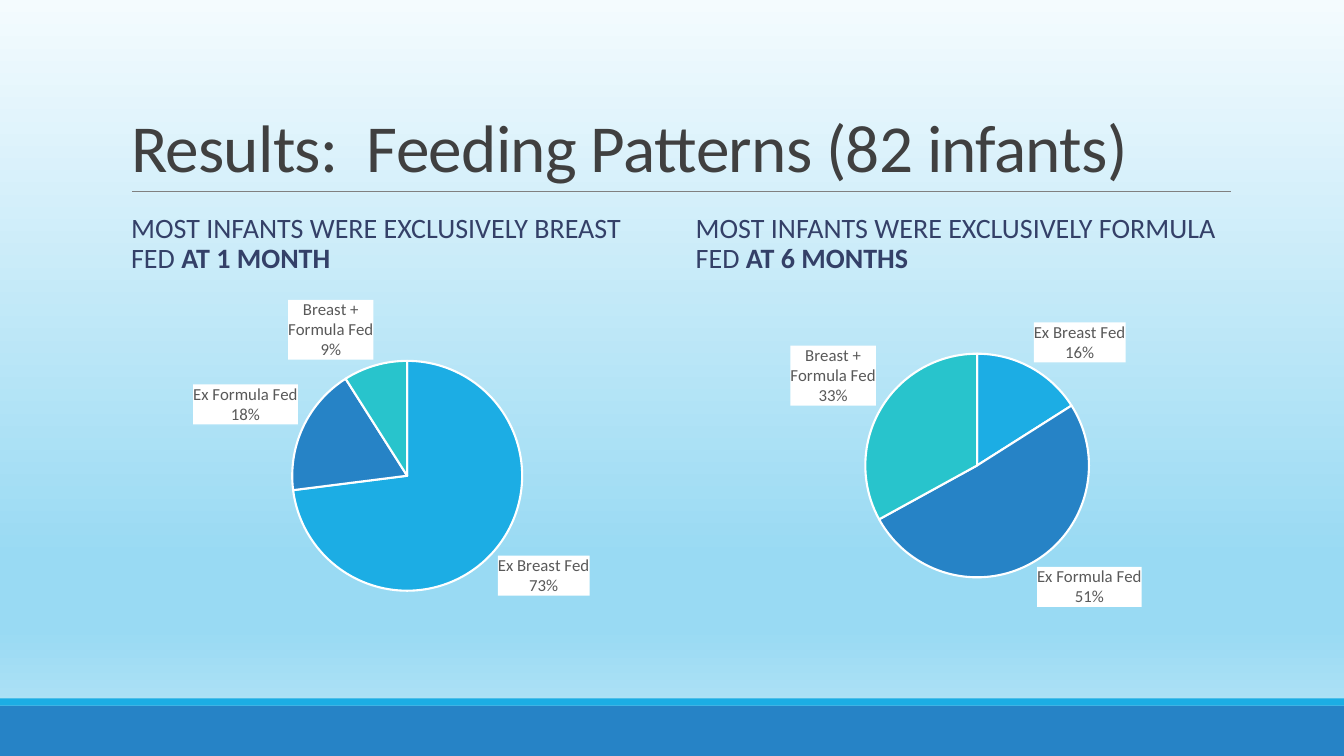
"""Build the feeding patterns slide with two pie charts."""
from copy import deepcopy
from dataclasses import dataclass

from lxml import etree
from pptx import Presentation
from pptx.chart.data import CategoryChartData as Data
from pptx.dml.color import RGBColor as RGB
from pptx.enum.chart import XL_CHART_TYPE as Kind, XL_LABEL_POSITION as Spot
from pptx.enum.shapes import MSO_CONNECTOR as Link, MSO_SHAPE as Form
from pptx.enum.text import MSO_ANCHOR as Anchor, MSO_AUTO_SIZE as Fit, PP_ALIGN as Align
from pptx.oxml import parse_xml
from pptx.oxml.ns import nsdecls, qn
from pptx.util import Inches, Pt

TITLE = "Results:  Feeding Patterns (82 infants)"
GROUPS = ["Ex Breast Fed", "Ex Formula Fed", "Breast + Formula Fed"]
PANELS = [
    {"slot": 1, "left": 1.2, "lead": "MOST INFANTS WERE EXCLUSIVELY BREAST FED ",
     "age": "AT 1 MONTH", "shares": (73, 18, 9),
     "box": (0.94, 2.82, 5.66, 3.57), "hub": (4.04, 4.72), "radius": 1.14},
    {"slot": 3, "left": 6.8, "lead": "MOST INFANTS WERE EXCLUSIVELY FORMULA FED ",
     "age": "AT 6 MONTHS", "shares": (16, 51, 33),
     "box": (6.8, 2.82, 5.4, 3.59), "hub": (9.69, 4.62), "radius": 1.11},
]
BARS = [((0, 7, 13.33, 0.5), "2683C6"), ((0, 6.93, 13.33, 0.07), "1CADE4")]


@dataclass(frozen=True)
class Theme:
    """Colours and type sizes."""
    font: str = "Calibri"
    title: str = "404040"
    head: str = "344068"
    label: str = "595959"
    rule: str = "808080"
    white: str = "FFFFFF"
    slices: tuple = ("1CADE4", "2683C6", "28C4CC")
    sky: tuple = ((0, "F4FBFE"), (0.74, "99DAF3"), (0.83, "99DAF3"), (1, "BBE6F7"))
    big: float = 48
    mid: float = 20
    small: float = 12


THEME = Theme()


def hue(code):
    """Turn a hex code into a colour."""
    return RGB.from_string(code)


def style(font, size, code, bold=False):
    """Set the face, size, colour and weight of a font."""
    font.name, font.size, font.bold = THEME.font, Pt(size), bold
    font.color.rgb = hue(code)


def place(shape, box):
    """Move and size a shape in inches."""
    shape.left, shape.top, shape.width, shape.height = map(Inches, box)


def prepare(shape, box, anchor, spacing):
    """Place a text placeholder and return its paragraph."""
    place(shape, box)
    frame = shape.text_frame
    frame.auto_size, frame.word_wrap = Fit.NONE, True
    frame.vertical_anchor = anchor
    para = frame.paragraphs[0]
    para.alignment, para.line_spacing = Align.LEFT, spacing
    return para


def paint_sky(slide):
    """Fill the background with the four-stop gradient."""
    fill = slide.background.fill
    fill.gradient()
    fill.gradient_angle = 270
    stops = slide.element.find(".//" + qn("a:gsLst"))
    while len(stops) < len(THEME.sky):
        stops.append(deepcopy(stops[0]))
    for stop, (spot, code) in zip(fill.gradient_stops, THEME.sky):
        stop.position, stop.color.rgb = spot, hue(code)


def add_frame(slide):
    """Add the footer bars and the title rule."""
    for box, code in BARS:
        bar = slide.shapes.add_shape(Form.RECTANGLE, *map(Inches, box))
        bar.shadow.inherit = False
        bar.fill.solid()
        bar.fill.fore_color.rgb = hue(code)
        bar.line.fill.background()
    rule = slide.shapes.add_connector(Link.STRAIGHT, *map(Inches, (1.31, 1.9, 12.21, 1.9)))
    rule.line.color.rgb, rule.line.width = hue(THEME.rule), Pt(0.5)
    etree.SubElement(rule.element.spPr, qn("a:effectLst"))


def add_title(slide):
    """Write the slide title."""
    para = prepare(slide.shapes.title, (1.2, 0.31, 11, 1.59), Anchor.BOTTOM, 0.85)
    para.text = TITLE
    run = para.runs[0]
    style(run.font, THEME.big, THEME.title)
    run.font.element.set("spc", "-50") if hasattr(run.font, "element") else \
        para.runs[0].font._element.set("spc", "-50")


def add_head(slide, panel):
    """Write the heading above a pie."""
    holder = next(p for p in slide.placeholders
                  if p.placeholder_format.idx == panel["slot"])
    para = prepare(holder, (panel["left"], 2.02, 5.4, 0.81), Anchor.MIDDLE, 0.9)
    para.space_before, para.space_after = Pt(12), Pt(2)
    for words, bold in ((panel["lead"], False), (panel["age"], True)):
        run = para.add_run()
        run.text = words
        style(run.font, THEME.mid, THEME.head, bold)


def set_plot(chart, panel):
    """Fix the pie's centre and radius within its frame."""
    left, top, wide, high = panel["box"]
    (mid, level), radius = panel["hub"], panel["radius"]
    parts = {"x": (mid - radius - left) / wide, "y": (level - radius - top) / high,
             "w": 2 * radius / wide, "h": 2 * radius / high}
    modes = '<c:layoutTarget val="inner"/><c:xMode val="edge"/><c:yMode val="edge"/>'
    sizes = "".join(f'<c:{key} val="{val:.3f}"/>' for key, val in parts.items())
    area = chart.element.find(".//" + qn("c:plotArea"))
    for old in area.findall(qn("c:layout")):
        area.remove(old)
    area.insert(0, parse_xml(f'<c:layout {nsdecls("c")}><c:manualLayout>{modes}{sizes}'
                             '</c:manualLayout></c:layout>'))


def add_labels(chart, series):
    """Show category and percent on white labels."""
    tags = series.data_labels
    tags.show_value, tags.show_category_name, tags.show_percentage = False, True, True
    tags.number_format, tags.number_format_is_linked = "0%", False
    tags.position = Spot.OUTSIDE_END
    style(tags.font, THEME.small, THEME.label)
    node = chart.element.find(".//" + qn("c:dLbls"))
    node.find(qn("c:txPr")).addprevious(parse_xml(
        f'<c:spPr {nsdecls("c", "a")}><a:solidFill><a:srgbClr val="{THEME.white}"/>'
        '</a:solidFill><a:ln><a:noFill/></a:ln></c:spPr>'))
    gap = parse_xml(f'<c:separator {nsdecls("c")}>\n</c:separator>')
    node.find(qn("c:showBubbleSize")).addnext(gap)


def add_pie(slide, panel):
    """Add one pie chart."""
    data = Data()
    data.categories = GROUPS
    data.add_series("Series 1", panel["shares"])
    chart = slide.shapes.add_chart(Kind.PIE, *map(Inches, panel["box"]), data).chart
    chart.has_title = chart.has_legend = False
    chart.font.name, chart.font.size = THEME.font, Pt(10)
    plot = chart.plots[0]
    plot.vary_by_categories = True
    series = plot.series[0]
    for spot, code in enumerate(THEME.slices):
        look = series.points[spot].format
        look.fill.solid()
        look.fill.fore_color.rgb = hue(code)
        look.line.color.rgb, look.line.width = hue(THEME.white), Pt(1.5)
    add_labels(chart, series)
    set_plot(chart, panel)


def main():
    """Build and save the slide."""
    deck = Presentation()
    deck.slide_width, deck.slide_height = Inches(13.33), Inches(7.5)
    slide = deck.slides.add_slide(deck.slide_layouts[4])
    paint_sky(slide)
    add_frame(slide)
    add_title(slide)
    for panel in PANELS:
        add_head(slide, panel)
        add_pie(slide, panel)
    for holder in list(slide.placeholders):
        if holder.placeholder_format.idx in (2, 4):
            holder.element.getparent().remove(holder.element)
    deck.save("out.pptx")


if __name__ == "__main__":
    main()
